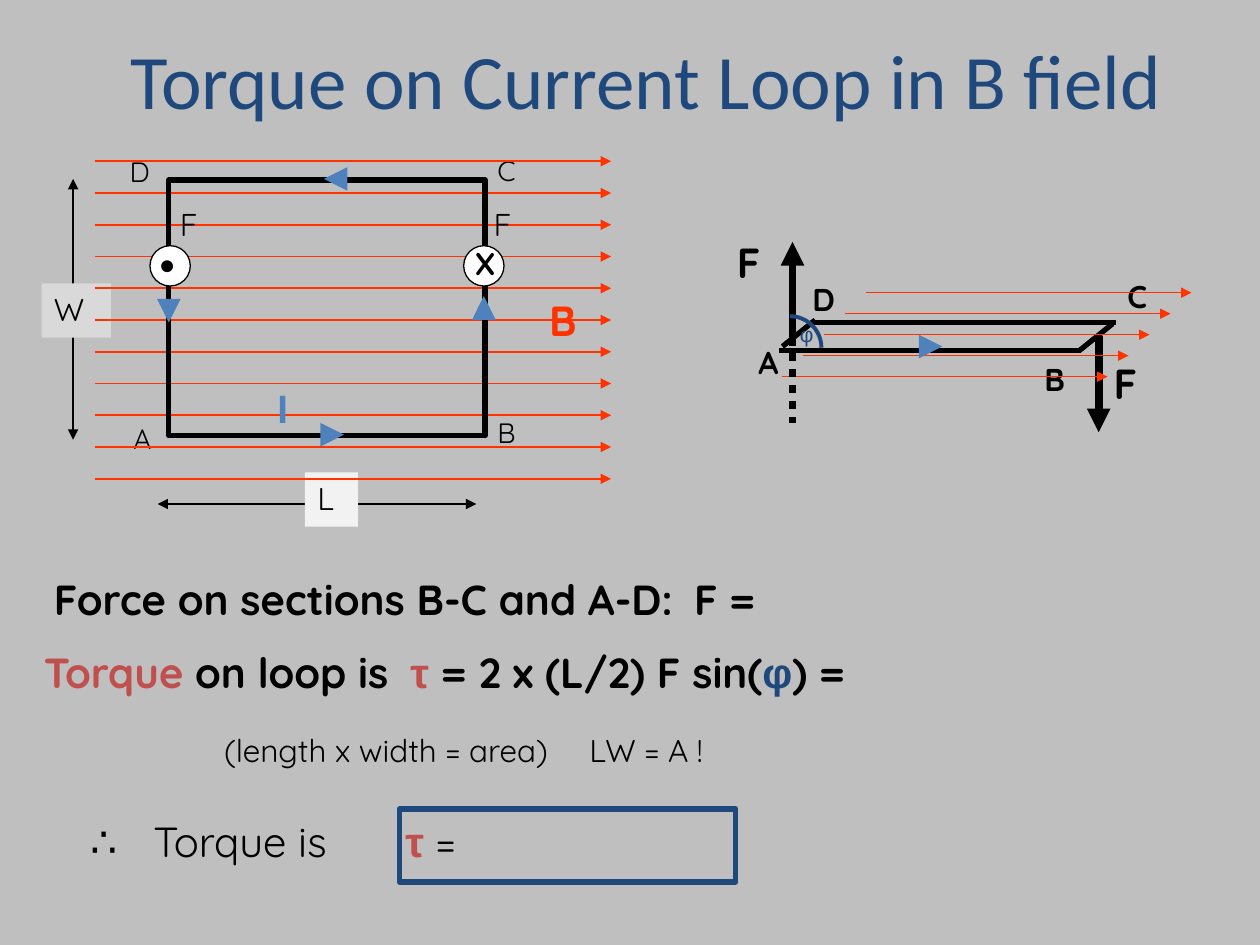
import lxml.etree
import pptx
import pptx.dml.color
import pptx.enum.dml
import pptx.enum.shapes
import pptx.enum.text
import pptx.oxml.ns
import pptx.util

Inches = pptx.util.Inches
RGBColor = pptx.dml.color.RGBColor
Shape = pptx.enum.shapes.MSO_SHAPE
Anchor = pptx.enum.text.MSO_ANCHOR
Align = pptx.enum.text.PP_ALIGN
qn = pptx.oxml.ns.qn

BLACK = RGBColor(0x00, 0x00, 0x00)
WHITE = RGBColor(0xFF, 0xFF, 0xFF)
GRAY = RGBColor(0xBF, 0xBF, 0xBF)
WIDTH_LABEL = RGBColor(0xD9, 0xD9, 0xD9)
LENGTH_LABEL = RGBColor(0xF2, 0xF2, 0xF2)
NAVY = RGBColor(0x1F, 0x49, 0x7D)
BLUE = RGBColor(0x4F, 0x81, 0xBD)
RED = RGBColor(0xC0, 0x50, 0x4D)
FIELD = RGBColor(0xFF, 0x33, 0x00)


def add_run(paragraph, text, *, size=24, color=BLACK, bold=False, font="Quicksand"):
    run = paragraph.add_run()
    run.text = text
    run.font.size = pptx.util.Pt(size)
    run.font.color.rgb = color
    run.font.bold = bold
    run.font.name = font


class Canvas:
    def __init__(self, slide):
        self.slide = slide
        self.shapes = slide.shapes

    def start_group(self):
        self.shapes = self.slide.shapes.add_group_shape().shapes

    def end_group(self):
        self.shapes = self.slide.shapes

    def text(self, box, runs, tabs=(), align=Align.LEFT, anchor=Anchor.TOP):
        shape = self.shapes.add_textbox(*map(Inches, box))
        self.fill_text(shape, runs, tabs, align, anchor)

    def fill_text(self, shape, runs, tabs=(), align=Align.LEFT, anchor=Anchor.TOP):
        frame = shape.text_frame
        frame.word_wrap = True
        frame.vertical_anchor = anchor
        paragraph = frame.paragraphs[0]
        paragraph.alignment = align
        if tabs:
            properties = paragraph._p.get_or_add_pPr()
            tab_list = lxml.etree.SubElement(properties, qn("a:tabLst"))
            for position in tabs:
                tab = lxml.etree.SubElement(tab_list, qn("a:tab"))
                tab.set("pos", str(Inches(position)))
                tab.set("algn", "l")
        for text, style in runs:
            add_run(paragraph, text, **style)

    def label(self, text, left, top, width, height, **style):
        self.text((left, top, width, height), [(text, style)])

    def shape(self, kind, box, fill=None, line=None, weight=1):
        shape = self.shapes.add_shape(kind, *map(Inches, box))
        shape.shadow.inherit = False
        if fill is None:
            shape.fill.background()
        else:
            shape.fill.solid()
            shape.fill.fore_color.rgb = fill
        if line is None:
            shape.line.fill.background()
        else:
            shape.line.color.rgb = line
            shape.line.width = pptx.util.Pt(weight)
        return shape

    def line(self, start, end, color=BLACK, weight=3.0, ends=(), dash=None):
        connector = self.shapes.add_connector(
            pptx.enum.shapes.MSO_CONNECTOR.STRAIGHT, *map(Inches, start + end))
        connector.line.color.rgb = color
        connector.line.width = pptx.util.Pt(weight)
        if dash:
            connector.line.dash_style = dash
        outline = connector.line._get_or_add_ln()
        for name in ends:
            lxml.etree.SubElement(outline, qn(f"a:{name}End")).set("type", "triangle")
        lxml.etree.SubElement(connector._element.spPr, qn("a:effectLst"))

    def arrow(self, start, end, color=BLACK, weight=4.5):
        self.line(start, end, color, weight, ends=("tail",))

    def dimension(self, start, end, text, box, fill):
        self.line(start, end, weight=1, ends=("head", "tail"))
        shape = self.shape(Shape.RECTANGLE, box, fill=fill)
        self.fill_text(shape, [(text, {"size": 18})])


def draw_equations(canvas):
    bold = {"bold": True}
    tau = {"bold": True, "font": "Arial", "color": RED}
    canvas.text((0.25, 5.08, 7.64, 0.5), [
        ("Torque ", {"bold": True, "color": RED}),
        ("on loop is\t", bold),
        ("τ ", tau),
        ("= 2 x (L/2) F sin(", bold),
        ("φ", {"bold": True, "font": "Arial", "color": NAVY}),
        (") =", bold),
    ], tabs=[2.91])
    canvas.text((0.33, 4.5, 5.89, 0.5),
                [("Force on sections B-C and A-D:\tF =", bold)], tabs=[5.08])
    canvas.text((1.68, 5.75, 4.82, 0.43),
                [("(length x width = area)\tLW = A !", {"size": 18})], tabs=[2.9])
    canvas.text((0.62, 6.42, 6.77, 0.5),
                [("∴\tTorque is\t", {}), ("τ", tau), (" =", {})], tabs=[0.5, 2.5])
    canvas.shape(Shape.RECTANGLE, (3.17, 6.42, 2.67, 0.58), line=NAVY, weight=3)


def draw_top_view(canvas):
    canvas.start_group()
    canvas.dimension((0.58, 1.42), (0.58, 3.49), "W", (0.33, 2.25, 0.55, 0.43), WIDTH_LABEL)
    canvas.dimension((1.25, 4), (3.78, 4), "L", (2.42, 3.75, 0.42, 0.43), LENGTH_LABEL)
    for corner, left, top in (("A", 0.96, 3.3), ("B", 3.85, 3.25),
                              ("C", 3.85, 1.17), ("D", 0.93, 1.18)):
        canvas.label(corner, left, top, 0.5, 0.37, size=16)
    for row in range(11):
        y = 1.28 + 0.252 * row
        canvas.arrow((0.75, y), (4.85, y), FIELD, 1)
    canvas.label("B", 4.26, 2.29, 0.68, 0.5, color=FIELD, bold=True)
    canvas.label("I", 2.1, 2.98, 0.31, 0.5, color=BLUE, bold=True, font="Calibri")
    canvas.shape(Shape.RECTANGLE, (1.34, 1.43, 2.51, 2.03), line=BLACK, weight=3)
    for start, end in (((2.72, 1.42), (2.57, 1.42)), ((3.84, 2.54), (3.84, 2.35)),
                       ((2.59, 3.45), (2.73, 3.45)), ((1.34, 2.37), (1.34, 2.56))):
        canvas.arrow(start, end, BLUE)
    for symbol, size, circle_left, left, top, force_left in (
            ("X", 18, 3.68, 3.67, 1.89, 3.82), ("•", 24, 1.19, 1.17, 1.85, 1.33)):
        canvas.shape(Shape.OVAL, (circle_left, 1.95, 0.32, 0.32), WHITE, BLACK, 0.75)
        canvas.label(symbol, left, top, 0.43, 0.5, size=size, bold=True)
        canvas.label("F", force_left, 1.58, 0.51, 0.43, size=18)
    canvas.end_group()


def draw_side_view(canvas):
    canvas.start_group()
    for start, end in (((6.18, 2.78), (8.58, 2.78)), ((6.46, 2.56), (8.86, 2.56)),
                       ((8.57, 2.78), (8.83, 2.57)), ((6.21, 2.75), (6.47, 2.54))):
        canvas.line(start, end)
    for corner, left, top in (("A", 5.92, 2.67), ("B", 8.19, 2.81),
                              ("C", 8.85, 2.15), ("D", 6.35, 2.17)):
        canvas.label(corner, left, top, 0.5, 0.4, size=18, bold=True)
    canvas.arrow((8.72, 2.67), (8.72, 3.43))
    canvas.arrow((6.29, 2.68), (6.29, 1.92))
    for left, top in ((8.74, 2.79), (5.75, 1.83)):
        canvas.label("F", left, top, 0.64, 0.5, bold=True)
    for row in range(5):
        offset = row / 6
        canvas.arrow((6.21 + offset, 2.99 - offset), (8.79 + offset, 2.99 - offset), FIELD, 0.75)
    canvas.line((6.29, 2.68), (6.29, 3.36), weight=4.5, dash=pptx.enum.dml.MSO_LINE.ROUND_DOT)
    canvas.shape(Shape.ARC, (6.02, 2.51, 0.5, 0.5), line=NAVY, weight=2.25)
    canvas.label("φ", 6.25, 2.5, 0.42, 0.3, size=12, color=NAVY, font="Arial")
    canvas.arrow((7.33, 2.75), (7.48, 2.75), BLUE)
    canvas.end_group()


def main():
    presentation = pptx.Presentation()
    presentation.slide_width = Inches(10)
    presentation.slide_height = Inches(7.5)
    slide = presentation.slides.add_slide(presentation.slide_layouts[6])
    slide.background.fill.solid()
    slide.background.fill.fore_color.rgb = GRAY
    canvas = Canvas(slide)
    draw_equations(canvas)
    draw_top_view(canvas)
    canvas.text((0.67, 0, 8.92, 1.25),
                [("Torque on Current Loop in B field", {"size": 44, "color": NAVY, "font": "Calibri"})],
                align=Align.CENTER, anchor=Anchor.MIDDLE)
    draw_side_view(canvas)
    presentation.save("out.pptx")


if __name__ == "__main__":
    main()
